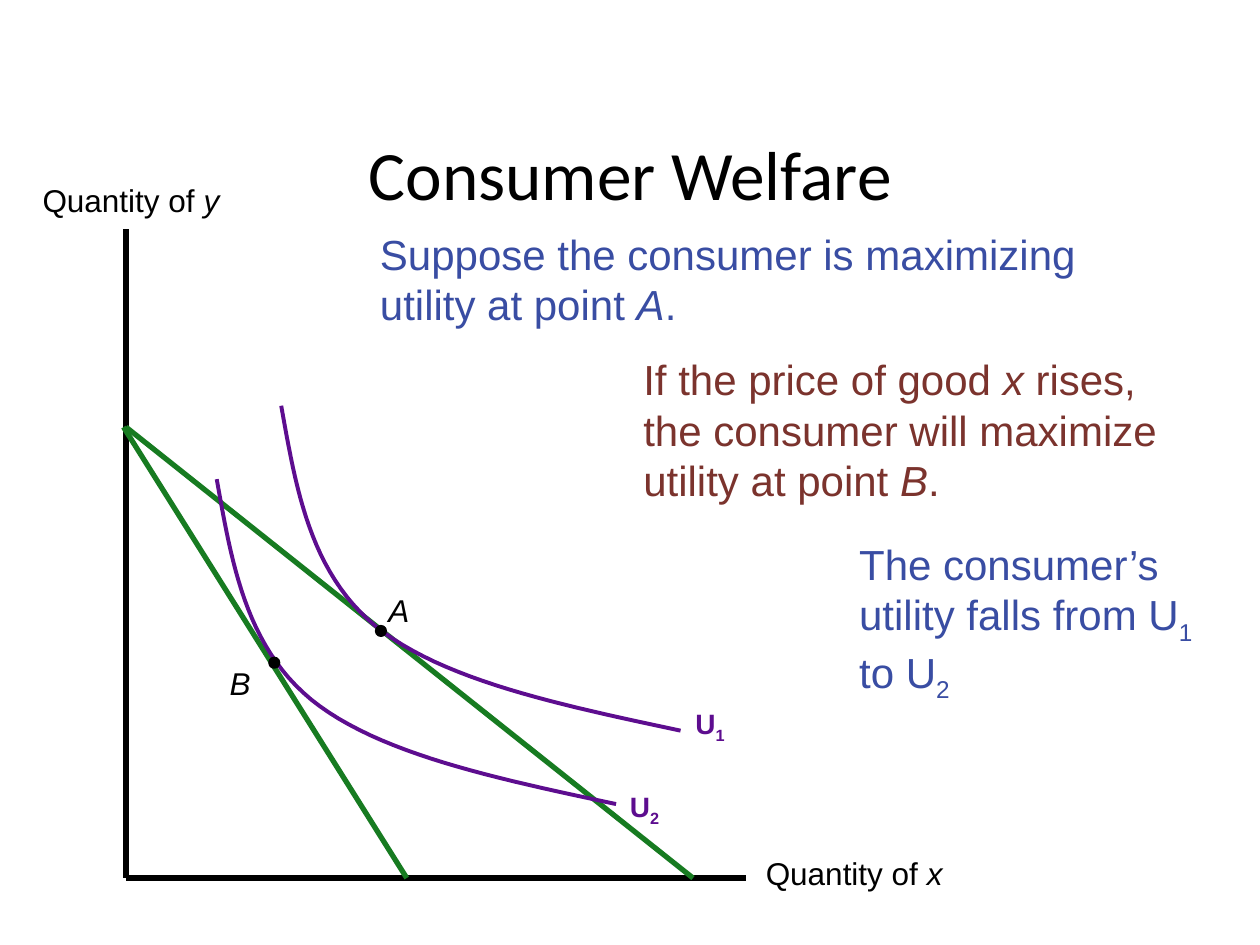
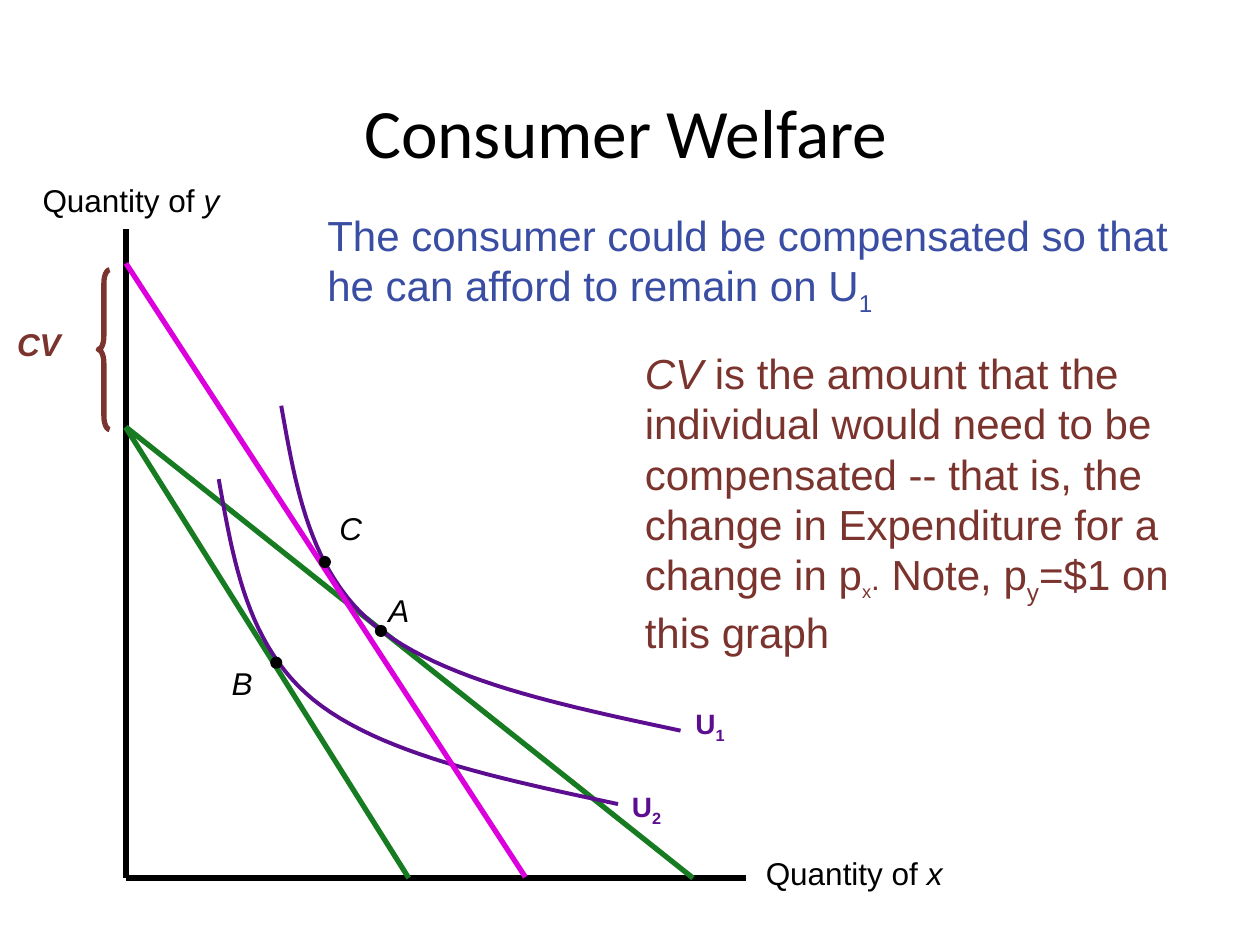
from dataclasses import dataclass

from lxml import etree
from pptx import Presentation
from pptx.dml.color import RGBColor
from pptx.enum.shapes import MSO_CONNECTOR, MSO_SHAPE
from pptx.enum.text import MSO_ANCHOR, MSO_AUTO_SIZE, PP_ALIGN
from pptx.oxml.ns import qn
from pptx.util import Cm, Pt

STRAIGHT = MSO_CONNECTOR.STRAIGHT
ELLIPSE, LEFT_BRACE = MSO_SHAPE.OVAL, MSO_SHAPE.LEFT_BRACE
LEFT, CENTER = PP_ALIGN.LEFT, PP_ALIGN.CENTER
TOP, MIDDLE = MSO_ANCHOR.TOP, MSO_ANCHOR.MIDDLE
GROW, FIXED = MSO_AUTO_SIZE.SHAPE_TO_FIT_TEXT, MSO_AUTO_SIZE.NONE

# Run formats
ITALIC = {"italic": True}
SUB = {"sub": True}


@dataclass(frozen=True)
class Theme:
    black: str = "000000"
    blue: str = "394DA3"
    brown: str = "7B332D"
    green: str = "177B21"
    purple: str = "5D0D8F"
    magenta: str = "DC00DC"
    title_font: str = "Calibri"
    body_font: str = "Arial"
    title: float = 39.6
    note: float = 24
    label: float = 18
    curve_label: float = 16
    thick: float = 3
    curve: float = 2.25
    dot: float = 1.25


THEME = Theme()

# Diagram geometry in cm
ORIGIN = (2.54, 17.7)
Y_TOP, X_RIGHT = 4.62, 15.04
Y_BUDGET = 8.61
DOT = 0.2
CURVE_START = (5.67, 8.18)
CURVE_SEGMENTS = [
    ((5.97, 9.86), (6.25, 11.53), (7.57, 12.62)),
    ((8.92, 13.72), (11.33, 14.22), (13.72, 14.73)),
]
STEPS = 24


def bezier(p0, p1, p2, p3, t):
    """Point at t on a cubic curve."""
    u = 1 - t
    return tuple(u**3 * a + 3 * u * u * t * b + 3 * u * t * t * c + t**3 * d
                 for a, b, c, d in zip(p0, p1, p2, p3))


def indifference_points():
    points = [CURVE_START]
    for segment in CURVE_SEGMENTS:
        start = points[-1]
        points += [bezier(start, *segment, i / STEPS) for i in range(1, STEPS + 1)]
    return points


def add_run(p, text, size=THEME.label, color=THEME.black, font=THEME.body_font,
            bold=False, italic=False, sub=False):
    r = p.add_run()
    r.text = text
    r.font.name, r.font.size = font, Pt(size)
    r.font.bold, r.font.italic = bold, italic
    r.font.color.rgb = RGBColor.from_string(color)
    if sub:
        r.font._element.set("baseline", "-25000")


class Deck:
    def __init__(self, theme):
        self.theme = theme
        self.prs = Presentation()
        self.prs.slide_width, self.prs.slide_height = Cm(25.4), Cm(19.05)
        self.s = None

    def new_slide(self, title, x, y):
        self.s = self.prs.slides.add_slide(self.prs.slide_layouts[6])
        self.text([[(title, {})]], x, y, 21.59, 1.45, align=CENTER, grow=False,
                  size=self.theme.title, font=self.theme.title_font)

    def text(self, paragraphs, x, y, w, h, align=LEFT, anchor=MIDDLE, wrap=True,
             grow=True, **style):
        """Each paragraph is a list of (text, format) runs."""
        tf = self.s.shapes.add_textbox(Cm(x), Cm(y), Cm(w), Cm(h)).text_frame
        tf.word_wrap, tf.vertical_anchor = wrap, anchor
        tf.auto_size = GROW if grow else FIXED
        for i, runs in enumerate(paragraphs):
            p = tf.add_paragraph() if i else tf.paragraphs[0]
            p.alignment = align
            for text, fmt in runs:
                add_run(p, text, **{**style, **fmt})

    def note(self, paragraphs, x, y, w, h, color, wrap=True):
        self.text(paragraphs, x, y, w, h, wrap=wrap, color=color, size=self.theme.note)

    def label(self, runs, x, y, w=0.94):
        self.text([runs], x, y, w, 1.02, align=CENTER, wrap=False)

    def curve_label(self, number, x, y):
        self.text([[("U", {}), (number, SUB)]], x, y, 1.14, 0.94, wrap=False, bold=True,
                  color=self.theme.purple, size=self.theme.curve_label)

    def outline(self, sp, color, width):
        sp.line.color.rgb = RGBColor.from_string(color)
        sp.line.width = Pt(width)

    def line(self, start, end, color):
        sp = self.s.shapes.add_connector(STRAIGHT, *map(Cm, (*start, *end)))
        self.outline(sp, color, self.theme.thick)
        etree.SubElement(sp._element.spPr, qn("a:effectLst"))

    def curve(self, dx=0, dy=0):
        points = [(Cm(x + dx), Cm(y + dy)) for x, y in indifference_points()]
        builder = self.s.shapes.build_freeform(*points[0])
        builder.add_line_segments(points[1:], close=False)
        sp = builder.convert_to_shape()
        sp.shadow.inherit = False
        sp.fill.background()
        self.outline(sp, self.theme.purple, self.theme.curve)

    def shape(self, kind, x, y, w, h, color, width, fill=None):
        sp = self.s.shapes.add_shape(kind, Cm(x), Cm(y), Cm(w), Cm(h))
        sp.shadow.inherit = False
        if fill:
            sp.fill.solid()
            sp.fill.fore_color.rgb = RGBColor.from_string(fill)
        else:
            sp.fill.background()
        self.outline(sp, color, width)
        return sp

    def point(self, name, x, y, label_x, label_y):
        black = self.theme.black
        self.shape(ELLIPSE, x, y, DOT, DOT, black, self.theme.dot, fill=black)
        self.label([(name, ITALIC)], label_x, label_y)

    def diagram(self, shift=0):
        """Axes, two budget lines and two curves; shift moves the B group right."""
        t = self.theme
        x0, y0 = ORIGIN
        # Axes, with labels wide enough for one line
        self.line((x0, Y_TOP), ORIGIN, t.black)
        self.line(ORIGIN, (X_RIGHT, y0), t.black)
        for axis, x, y in (("x", 14.97, 17.09), ("y", 0.39, 3.53)):
            self.label([("Quantity of ", {}), (axis, ITALIC)], x, y, w=4.5)
        # Initial optimum A on U1
        self.line((x0, Y_BUDGET), (13.97, y0), t.green)
        self.curve()
        self.curve_label("1", 13.77, 14.15)
        self.point("A", 7.58, 12.62, 7.57, 11.78)
        # New optimum B on U2
        self.line((2.49 + shift, Y_BUDGET), (8.2 + shift, y0), t.green)
        self.curve(shift - 1.3, 1.48)
        self.curve_label("2", 12.45 + shift, 15.83)
        self.point("B", 5.43 + shift, 13.26, 4.37 + shift, 13.26)


def price_rise_slide(deck):
    t = deck.theme
    deck.new_slide("Consumer Welfare", 1.91, 2.75)
    deck.diagram()
    deck.note([[("Suppose the consumer is maximizing", {})],
               [("utility at point ", {}), ("A", ITALIC), (".", {})]],
              7.41, 4.47, 14.78, 2.29, t.blue, wrap=False)
    deck.note([[("If the price of good ", {}), ("x", ITALIC),
                (" rises, the consumer will maximize utility at point ", {}),
                ("B", ITALIC), (".", {})]],
              12.72, 7.01, 11.68, 3.3, t.brown)
    deck.note([[("The consumer’s utility falls from U", {}), ("1", SUB),
                (" to U", {}), ("2", SUB)]],
              17.07, 10.87, 7.49, 3.3, t.blue)


def compensation_slide(deck):
    t = deck.theme
    deck.new_slide("Consumer Welfare", 1.82, 1.91)
    deck.diagram(shift=0.04)
    deck.note([[("The consumer could be compensated so that he can afford to remain on U", {}),
                ("1", SUB)]],
              6.35, 4.16, 18.29, 2.29, t.blue)
    # Compensated budget line
    deck.line((ORIGIN[0], 5.31), (10.59, 17.68), t.magenta)
    deck.point("C", 6.45, 11.23, 6.59, 10.14)
    # Compensating variation
    small = {"size": t.label}
    deck.note([[("CV", ITALIC),
                (" is the amount that the individual would need to be compensated -- "
                 "that is, the change in Expenditure for a change in p", {}),
                ("x", {**small, **SUB}), (".", small), (" Note, p", {}), ("y", SUB),
                ("=$1 on this graph", {})]],
              12.75, 6.92, 11.68, 6.4, t.brown)
    brace = deck.shape(LEFT_BRACE, 1.98, 5.44, 0.23, 3.22, t.brown, t.thick)
    brace.adjustments[0] = 1.19
    deck.text([[("CV", ITALIC)]], 0, 6.43, 1.57, 1.02, align=CENTER, anchor=TOP,
              bold=True, color=t.brown)


def main():
    deck = Deck(THEME)
    price_rise_slide(deck)
    compensation_slide(deck)
    deck.prs.save("out.pptx")


if __name__ == "__main__":
    main()
